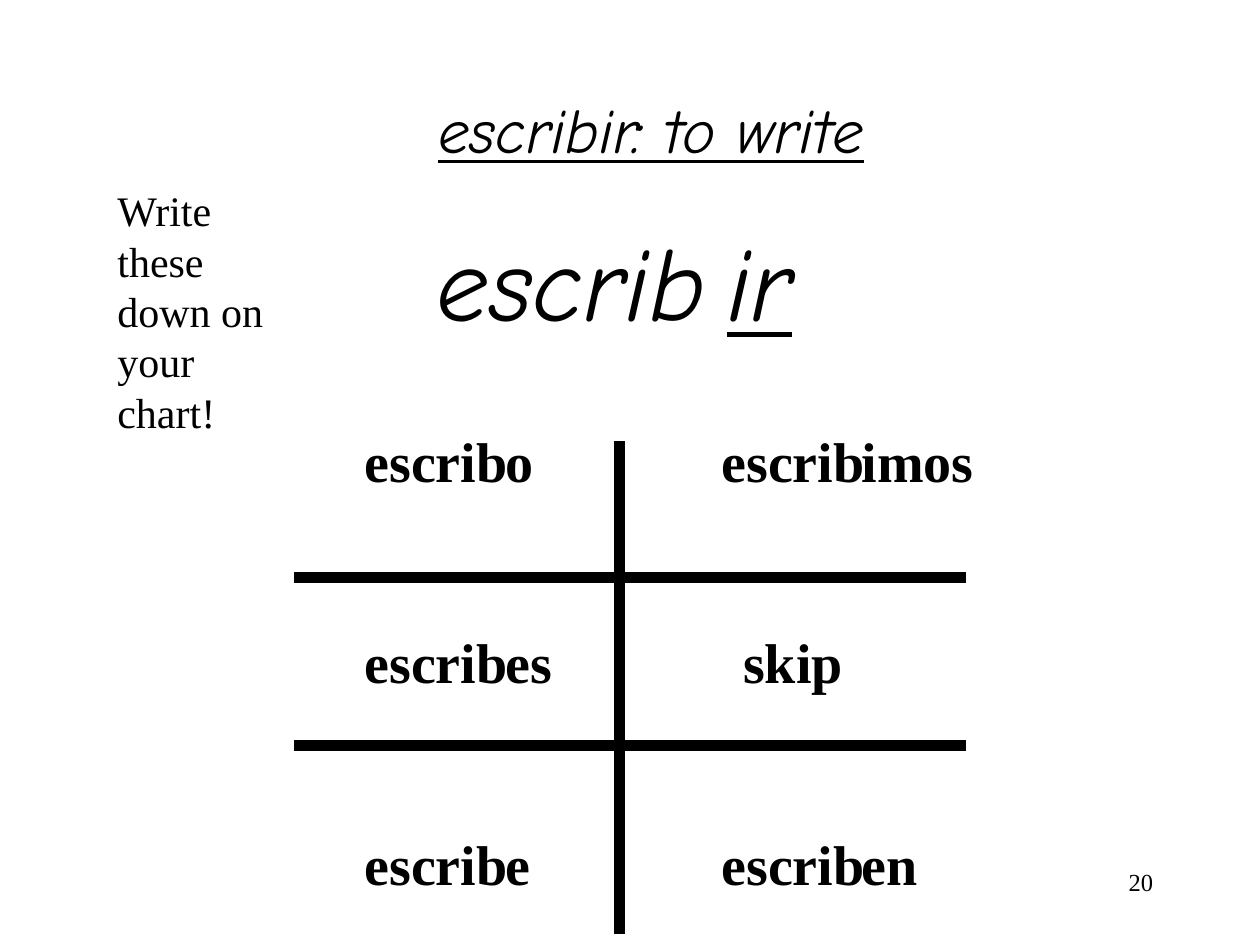
from pptx import Presentation
from pptx.dml.color import RGBColor
from pptx.enum.shapes import MSO_CONNECTOR
from pptx.enum.text import MSO_ANCHOR, MSO_AUTO_SIZE, PP_ALIGN
from pptx.oxml.xmlchemy import OxmlElement
from pptx.util import Pt

BLACK = RGBColor(0, 0, 0)
SERIF = "Times New Roman"
SCRIPT = "Comic Neue"
LINE_RATIO = 1.2
ENDING_SIZE = 32
LINE_HEIGHT = ENDING_SIZE * LINE_RATIO
ROW_STEP = 3 * LINE_HEIGHT
TABLE_TOP = 240


class SlideBuilder:
    def __init__(self, deck):
        self.page = deck.slides.add_slide(deck.slide_layouts[5])
        self.color = BLACK

    def fill_text(self, shape, rows, align, wrap, line_spacing=None, **style):
        frame = shape.text_frame
        settings = {
            "word_wrap": wrap,
            "auto_size": MSO_AUTO_SIZE.SHAPE_TO_FIT_TEXT,
            "vertical_anchor": MSO_ANCHOR.TOP,
        }
        for name, value in settings.items():
            setattr(frame, name, value)
        for index, (text, space_before) in enumerate(rows):
            para = frame.paragraphs[0] if index == 0 else frame.add_paragraph()
            para.alignment = align
            para.space_before = Pt(space_before)
            if line_spacing:
                para.line_spacing = Pt(line_spacing)
            span = para.add_run()
            span.text = text
            span.font.color.rgb = self.color
            for name, value in style.items():
                setattr(span.font, name, value)

    def title(self, text, left, top, width, height, **style):
        shape = self.page.shapes.title
        bounds = {"left": left, "top": top, "width": width, "height": height}
        for name, value in bounds.items():
            setattr(shape, name, Pt(value))
        self.fill_text(shape, [(text, 0)], PP_ALIGN.RIGHT, False, **style)

    def text(self, rows, left, top, width, height, align, wrap=False, **style):
        box = self.page.shapes.add_textbox(Pt(left), Pt(top), Pt(width), Pt(height))
        self.fill_text(box, rows, align, wrap, **style)

    def column(self, words, left, width, align):
        rows = []
        previous = 0
        for row, word in words.items():
            gap = (row - previous) * ROW_STEP - LINE_HEIGHT if rows else 0
            rows.append((word, gap))
            previous = row
        self.text(rows, left, TABLE_TOP, width, 276, align,
                  line_spacing=LINE_HEIGHT, size=Pt(ENDING_SIZE), name=SERIF, bold=True)

    def line(self, start_x, start_y, end_x, end_y):
        rule = self.page.shapes.add_connector(
            MSO_CONNECTOR.STRAIGHT, Pt(start_x), Pt(start_y), Pt(end_x), Pt(end_y))
        rule.line.color.rgb = self.color
        rule.line.width = Pt(6)
        rule._element.spPr.append(OxmlElement("a:effectLst"))


def main():
    deck = Presentation()
    deck.slide_width, deck.slide_height = Pt(720), Pt(540)
    slide = SlideBuilder(deck)

    script = {"name": SCRIPT, "italic": True}
    slide.title("escribir: to write", 198, 48, 303, 50.4,
                size=Pt(36), underline=True, **script)
    slide.text([("escrib", 0)], 232, 120, 188.6, 79.2, PP_ALIGN.CENTER,
               size=Pt(60), **script)
    slide.text([("ir", 0)], 396, 120, 76.3, 79.2, PP_ALIGN.CENTER, True,
               size=Pt(60), underline=True, **script)

    stem = "escrib"
    slide.column({0: stem, 1: stem, 2: stem}, 201, 96.5, PP_ALIGN.CENTER)
    slide.column({0: stem, 1: "skip", 2: stem}, 404.6, 97.2, PP_ALIGN.CENTER)
    slide.line(354, 252, 354, 534)
    for height in (330, 426):
        slide.line(168, height, 552, height)
    slide.column({0: "o", 1: "es", 2: "e"}, 282, 41, PP_ALIGN.LEFT)
    slide.column({0: "imos", 2: "en"}, 485.3, 79.2, PP_ALIGN.LEFT)

    slide.text([("Write these down on your chart!", 0)], 60, 102, 114, 151.2,
               PP_ALIGN.LEFT, True, line_spacing=24 * LINE_RATIO,
               size=Pt(24), name=SERIF)
    slide.text([("20", 0)], 516, 492, 150, 36, PP_ALIGN.RIGHT, True,
               size=Pt(14), name=SERIF)
    deck.save("out.pptx")


if __name__ == "__main__":
    main()
